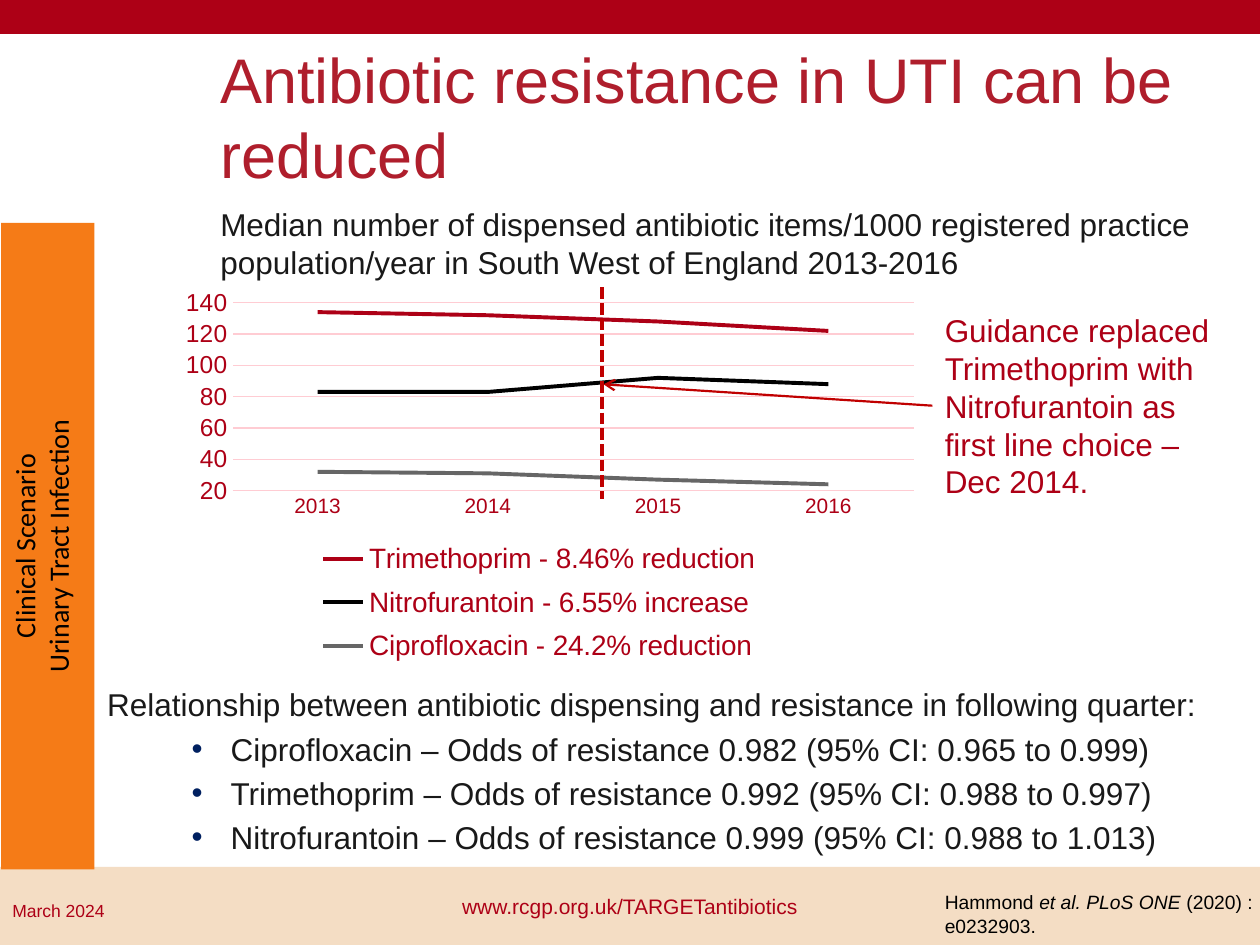
from lxml import etree
from pptx import Presentation
from pptx import util as u
from pptx.chart.data import CategoryChartData
from pptx.dml.color import RGBColor
from pptx.enum import chart as ch, dml, shapes, text
from pptx.oxml import parse_xml
from pptx.oxml.ns import nsdecls, qn

COLORS = {"red": "AD0016", "title": "AF1E2C", "ink": "191919", "black": "000000",
          "grey": "666666", "orange": "F57B17", "sand": "F4DDC4", "grid": "FFCCD3",
          "marker": "C00000", "bullet": "002060"}

TITLE = "Antibiotic resistance in UTI can be reduced"
SUBTITLE = ("Median number of dispensed antibiotic items/1000 registered practice "
            "population/year in South West of England 2013-2016")
SCENARIO = ["Clinical Scenario", "Urinary Tract Infection"]
GUIDANCE = "Guidance replaced Trimethoprim with Nitrofurantoin as first line choice – Dec 2014."
FINDING = "Relationship between antibiotic dispensing and resistance in following quarter:"
ODDS = [("Ciprofloxacin", "0.982", "0.965 to 0.999"),
        ("Trimethoprim", "0.992", "0.988 to 0.997"),
        ("Nitrofurantoin", "0.999", "0.988 to 1.013")]
YEARS = ["2013", "2014", "2015", "2016"]
DISPENSED = [("Trimethoprim - 8.46% reduction", (134, 132, 128, 122), "red"),
             ("Nitrofurantoin - 6.55% increase", (83, 83, 92, 88), "black"),
             ("Ciprofloxacin - 24.2% reduction", (32, 31, 27, 24), "grey")]
CITATION = [[("Hammond ", False), ("et al. PLoS ONE ", True), ("(2020) :", False)],
            [("e0232903.", False)]]


def rgb(name):
    return RGBColor.from_string(COLORS[name])


def inches(*lengths):
    return [u.Inches(length) for length in lengths]


def style(font, size, color, face="Arial"):
    font.size, font.name = u.Pt(size), face
    font.color.rgb = rgb(color)


def write(frame, paragraphs, size, color, face="Arial", align=text.PP_ALIGN.LEFT):
    """Fill a frame; each paragraph is a list of (wording, italic) runs."""
    frame.word_wrap = True
    frame.auto_size = text.MSO_AUTO_SIZE.NONE
    for i, runs in enumerate(paragraphs):
        paragraph = frame.add_paragraph() if i else frame.paragraphs[0]
        paragraph.alignment = align
        for wording, italic in runs:
            run = paragraph.add_run()
            run.text = wording
            style(run.font, size, color, face)
            run.font.italic = italic


def plain(*lines):
    return [[(line, False)] for line in lines]


def add_band(slide, box, color):
    band = slide.shapes.add_shape(shapes.MSO_SHAPE.RECTANGLE, *inches(*box))
    band.shadow.inherit = False
    band.fill.solid()
    band.fill.fore_color.rgb = rgb(color)
    band.line.fill.background()
    band.text_frame.vertical_anchor = text.MSO_ANCHOR.TOP
    return band


def add_note(slide, box, paragraphs, size, color, **options):
    note = slide.shapes.add_textbox(*inches(*box))
    write(note.text_frame, paragraphs, size, color, **options)
    return note


def place(placeholder, box):
    placeholder.left, placeholder.top, placeholder.width, placeholder.height = inches(*box)
    return placeholder.text_frame


def add_line(slide, ends, width):
    line = slide.shapes.add_connector(shapes.MSO_CONNECTOR.STRAIGHT, *inches(*ends))
    line.line.color.rgb = rgb("marker")
    line.line.width = u.Pt(width)
    etree.SubElement(line._element.spPr, qn("a:effectLst"))
    return line


def manual_layout(x, y, w, h, inner=False):
    target = '<c:layoutTarget val="inner"/>' if inner else ""
    sizes = "".join(f'<c:{tag} val="{value}"/>' for tag, value in zip("xywh", (x, y, w, h)))
    return parse_xml(f'<c:layout {nsdecls("c")}><c:manualLayout>{target}'
                     '<c:xMode val="edge"/><c:yMode val="edge"/>'
                     f'{sizes}</c:manualLayout></c:layout>')


def add_dispensing_chart(slide):
    data = CategoryChartData()
    data.categories = YEARS
    for name, values, _ in DISPENSED:
        data.add_series(name, values)
    chart = slide.shapes.add_chart(ch.XL_CHART_TYPE.LINE,
                                   *inches(1.37, 2.19, 5.94, 3.55), data).chart
    chart.has_title = False
    style(chart.font, 10, "red", "Calibri")
    chart.plots[0].vary_by_categories = False
    for series, (_, _, color) in zip(chart.plots[0].series, DISPENSED):
        series.smooth = False
        series.marker.style = ch.XL_MARKER_STYLE.NONE
        series.format.line.color.rgb = rgb(color)
        series.format.line.width = u.Pt(2.23)

    years, items = chart.category_axis, chart.value_axis
    for axis, size in ((years, 11.9), (items, 14)):
        axis.major_tick_mark = axis.minor_tick_mark = ch.XL_TICK_MARK.NONE
        style(axis.tick_labels.font, size, "red")
    items.minimum_scale, items.maximum_scale, items.major_unit = 20, 140, 20
    items.format.line.fill.background()
    items.has_major_gridlines = True
    for rule in (years.format.line, items.major_gridlines.format.line):
        rule.color.rgb = rgb("grid")
        rule.width = u.Pt(0.75)

    chart.has_legend = True
    legend = chart.legend
    legend.position = ch.XL_LEGEND_POSITION.BOTTOM
    legend.include_in_layout = False
    style(legend.font, 16, "red")
    for old in legend._element.findall(qn("c:layout")):
        legend._element.remove(old)
    legend._element.find(qn("c:legendPos")).addnext(manual_layout(0.18, 0.57, 0.62, 0.32))
    plot_area = chart._chartSpace.chart.plotArea
    for old in plot_area.findall(qn("c:layout")):
        plot_area.remove(old)
    plot_area.insert(0, manual_layout(0.08, 0.06, 0.91, 0.42, inner=True))


def set_bullet(paragraph):
    props = paragraph._p.get_or_add_pPr()
    props.set("marL", str(u.Inches(0.98)))
    props.set("indent", str(u.Inches(-0.31)))
    color = etree.SubElement(props, qn("a:buClr"))
    etree.SubElement(color, qn("a:srgbClr"), val=COLORS["bullet"])
    etree.SubElement(props, qn("a:buFont"), typeface="Arial")
    etree.SubElement(props, qn("a:buChar"), char="•")


def fill_findings(placeholder):
    frame = place(placeholder, (0.75, 5.39, 9.25, 1.45))
    odds = [f"{drug} – Odds of resistance {ratio} (95% CI: {interval})"
            for drug, ratio, interval in ODDS]
    write(frame, plain(FINDING, *odds), 18, "ink")
    heading, *bullets = frame.paragraphs
    props = heading._p.get_or_add_pPr()
    props.set("marL", "0")
    props.set("indent", "0")
    etree.SubElement(props, qn("a:buNone"))
    heading.space_before = u.Pt(0)
    for bullet in bullets:
        set_bullet(bullet)
        bullet.space_before = u.Pt(3.6)


def main():
    deck = Presentation()
    deck.slide_width, deck.slide_height = inches(10, 7.5)
    slide = deck.slides.add_slide(deck.slide_layouts[1])
    title, findings = slide.placeholders

    add_band(slide, (0, 6.88, 10, 0.62), "sand")
    add_band(slide, (0, 0, 10, 0.27), "red")
    date = add_band(slide, (0, 7.09, 1.74, 0.4), "sand")
    write(date.text_frame, plain("March 2024"), 10, "red")

    heading = place(title, (1.65, 0.48, 8.35, 1.09))
    heading.vertical_anchor = text.MSO_ANCHOR.BOTTOM
    write(heading, plain(TITLE), 36, "title")
    add_note(slide, (1.65, 1.58, 8.06, 0.71), plain(SUBTITLE), 18, "ink")

    scenario = add_band(slide, (0.01, 1.77, 0.74, 5.13), "orange").text_frame
    scenario._txBody.bodyPr.set("vert", "vert270")
    write(scenario, plain(*SCENARIO), 16, "black", "Calibri", text.PP_ALIGN.CENTER)

    add_dispensing_chart(slide)
    change_date = add_line(slide, (4.78, 2.28, 4.78, 3.96), 2.25)
    change_date.line.dash_style = dml.MSO_LINE.SQUARE_DOT
    pointer = add_line(slide, (7.4, 3.22, 4.79, 3.05), 1.25)
    etree.SubElement(pointer.line._get_or_add_ln(), qn("a:tailEnd"), type="arrow")
    add_note(slide, (7.4, 2.42, 2.3, 1.62), plain(GUIDANCE), 18, "red")

    fill_findings(findings)
    add_note(slide, (3.33, 7.04, 3.34, 0.3), plain("www.rcgp.org.uk/TARGETantibiotics"),
             12, "red", align=text.PP_ALIGN.CENTER)
    citation = add_note(slide, (7.4, 7.02, 2.6, 0.48), CITATION, 11, "black")
    citation.text_frame.margin_right = 0
    deck.save("out.pptx")


if __name__ == "__main__":
    main()
